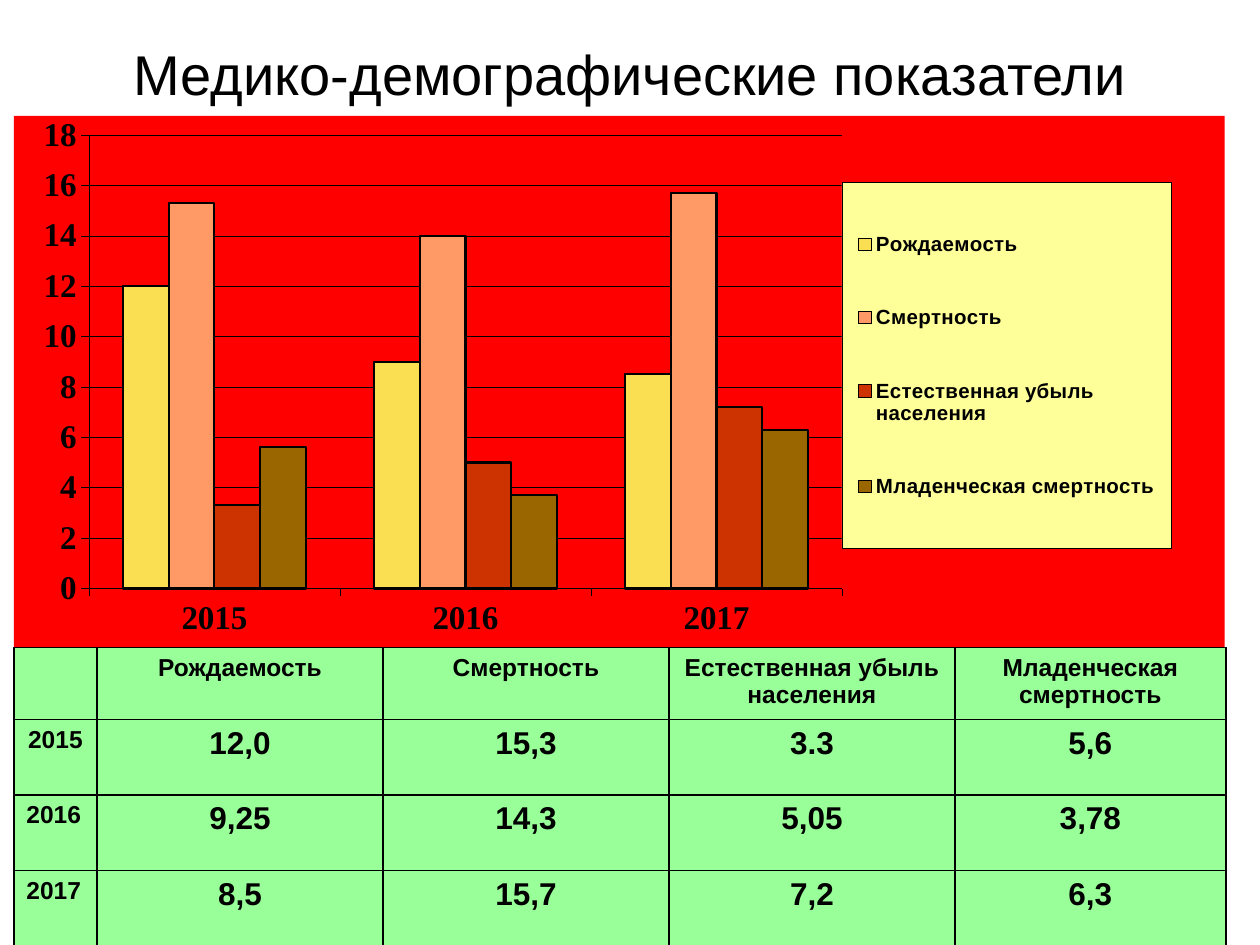
from lxml import etree
from pptx import Presentation
from pptx import util as u
from pptx.chart.data import CategoryChartData
from pptx.dml.color import RGBColor
from pptx.enum import chart as ch, text
from pptx.oxml import parse_xml
from pptx.oxml.ns import nsdecls, qn

BLACK, RED, GREEN, CREAM = "000000", "FF0000", "99FF99", "FFFF99"
YEARS = ["2015", "2016", "2017"]
SERIES = [
    ("Рождаемость", "FBDF53", [12, 9, 8.5]),
    ("Смертность", "FF9966", [15.3, 14, 15.7]),
    ("Естественная убыль населения", "CC3300", [3.3, 5, 7.2]),
    ("Младенческая смертность", "996600", [5.6, 3.7, 6.3]),
]
TABLE_VALUES = [
    ["12,0", "15,3", "3.3", "5,6"],
    ["9,25", "14,3", "5,05", "3,78"],
    ["8,5", "15,7", "7,2", "6,3"],
]


def color(hex_code):
    return RGBColor.from_string(hex_code)


def set_font(font, size, name="Arial", bold=True):
    font.size, font.name, font.bold = u.Pt(size), name, bold
    font.color.rgb = color(BLACK)


def set_line(line, width):
    line.color.rgb = color(BLACK)
    line.width = u.Pt(width)


def area_style(fill, line=None):
    """Return a c:spPr element for a chart part that has no format object."""
    outline = f'<a:solidFill><a:srgbClr val="{line}"/></a:solidFill>' if line else "<a:noFill/>"
    return parse_xml(
        f'<c:spPr {nsdecls("c", "a")}><a:solidFill><a:srgbClr val="{fill}"/></a:solidFill>'
        f'<a:ln w="3175">{outline}</a:ln></c:spPr>')


def manual_layout(x, y, w, h, inner=False):
    """Return a c:layout element with fractions of the chart's size."""
    layout = etree.Element(qn("c:layout"))
    manual = etree.SubElement(layout, qn("c:manualLayout"))
    values = {"layoutTarget": "inner"} if inner else {}
    values |= {"xMode": "edge", "yMode": "edge", "x": x, "y": y, "w": w, "h": h}
    for tag, value in values.items():
        etree.SubElement(manual, qn(f"c:{tag}")).set("val", str(value))
    return layout


def drop_layout(parent):
    for old in parent.findall(qn("c:layout")):
        parent.remove(old)


class SlideBuilder:
    def __init__(self, s):
        self.s = s

    def box(self, left, top, width, height):
        return [u.Inches(v) for v in (left, top, width, height)]

    def add_words(self, tf, words, size, bold=True, align=text.PP_ALIGN.CENTER, before=0):
        p = tf.paragraphs[0]
        p.alignment = align
        p.space_before = u.Pt(before)
        r = p.add_run()
        r.text = words
        set_font(r.font, size, bold=bold)

    def title(self, words, *place):
        tf = self.s.shapes.add_textbox(*self.box(*place)).text_frame
        tf.word_wrap = True
        tf.vertical_anchor = text.MSO_ANCHOR.MIDDLE
        self.add_words(tf, words, 32, bold=False)

    def chart(self, *place):
        data = CategoryChartData()
        data.categories = YEARS
        for name, _, values in SERIES:
            data.add_series(name, values)
        chart = self.s.shapes.add_chart(
            ch.XL_CHART_TYPE.COLUMN_CLUSTERED, *self.box(*place), data).chart
        chart.has_title = False
        set_font(chart.font, 18.9, "Times New Roman")
        chart_space = chart.element
        chart_space.find(qn("c:chart")).addnext(area_style(RED))

        plot = chart.plots[0]
        plot.vary_by_categories = False
        plot.gap_width, plot.overlap = 150, 0
        for series, (_, fill, _) in zip(plot.series, SERIES):
            series.format.fill.solid()
            series.format.fill.fore_color.rgb = color(fill)
            set_line(series.format.line, 1.25)
        plot_area = chart_space.find(f".//{qn('c:plotArea')}")
        drop_layout(plot_area)
        plot_area.insert(0, manual_layout(0.062, 0.036, 0.622, 0.851, inner=True))

        for axis in (chart.category_axis, chart.value_axis):
            axis.major_tick_mark = ch.XL_TICK_MARK.OUTSIDE
            set_font(axis.tick_labels.font, 18.9, "Times New Roman")
            set_line(axis.format.line, 0.31)
        chart.category_axis.tick_label_position = ch.XL_TICK_LABEL_POSITION.LOW
        axis = chart.value_axis
        axis.minimum_scale, axis.maximum_scale, axis.major_unit = 0, 18, 2
        set_line(axis.major_gridlines.format.line, 0.31)
        self.legend(chart)

    def legend(self, chart):
        chart.has_legend = True
        legend = chart.legend
        legend.position = ch.XL_LEGEND_POSITION.RIGHT
        legend.include_in_layout = False
        set_font(legend.font, 11.7)
        element = chart.element.find(f".//{qn('c:legend')}")
        drop_layout(element)
        element.find(qn("c:legendPos")).addnext(manual_layout(0.684, 0.125, 0.272, 0.687))
        element.find(qn("c:overlay")).addnext(area_style(CREAM, BLACK))

    def cell_style(self, cell):
        tc_pr = cell._tc.get_or_add_tcPr()
        for side in ("lnL", "lnR", "lnT", "lnB"):
            tc_pr.append(parse_xml(
                f'<a:{side} {nsdecls("a")} w="12700"><a:solidFill>'
                f'<a:srgbClr val="{BLACK}"/></a:solidFill></a:{side}>'))
        cell.fill.solid()
        cell.fill.fore_color.rgb = color(GREEN)

    def table(self, columns, rows, *place):
        table = self.s.shapes.add_table(
            len(rows), len(columns), *self.box(*place)).table
        table.first_row = table.horz_banding = False
        for column, width in zip(table.columns, columns):
            column.width = u.Inches(width)
        for i, words in enumerate(rows):
            table.rows[i].height = u.Inches(0.6 if i else 0.57)
            for j, word in enumerate(words):
                cell = table.cell(i, j)
                self.cell_style(cell)
                if not word:
                    continue
                is_label = i == 0 or j == 0
                align = text.PP_ALIGN.LEFT if j == 0 and i > 1 else text.PP_ALIGN.CENTER
                self.add_words(cell.text_frame, word, 14 if is_label else 18,
                               align=align, before=2.8 if is_label and i < 2 else 0)


def main():
    prs = Presentation()
    prs.slide_width, prs.slide_height = u.Inches(10), u.Inches(7.5)
    slide = SlideBuilder(prs.slides.add_slide(prs.slide_layouts[6]))
    slide.title("Медико-демографические показатели", 0.75, 0.33, 8.5, 0.5)
    slide.chart(0.11, 0.92, 9.61, 4.23)
    header = [""] + [name for name, _, _ in SERIES]
    rows = [header] + [[year] + values for year, values in zip(YEARS, TABLE_VALUES)]
    slide.table([0.66, 2.27, 2.27, 2.27, 2.15], rows, 0.11, 5.14, 9.61, 2.36)
    prs.save("out.pptx")


if __name__ == "__main__":
    main()
